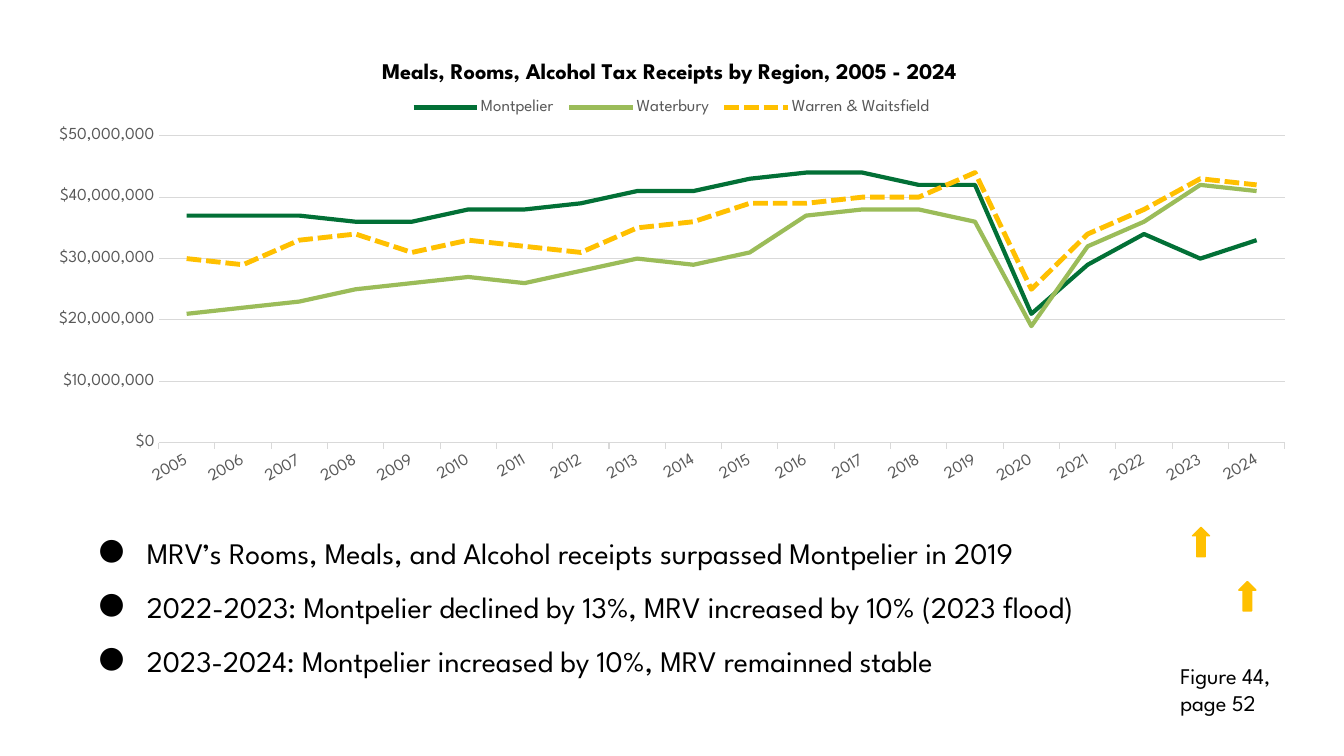
from lxml.etree import SubElement
from pptx import Presentation
from pptx.chart.data import CategoryChartData
from pptx.dml.color import RGBColor
from pptx.enum.chart import XL_CHART_TYPE, XL_LEGEND_POSITION, XL_TICK_MARK
from pptx.enum.dml import MSO_LINE
from pptx.enum.shapes import MSO_SHAPE
from pptx.oxml import parse_xml
from pptx.oxml.ns import nsdecls, qn
from pptx.util import Pt

COLORS = {
    "text": "000000",
    "axis": "595959",
    "grid": "D9D9D9",
    "montpelier": "027036",
    "waterbury": "9BBC59",
    "valley": "FFC000",
}
FONT = "League Spartan"
MILLION = 1_000_000
YEARS = [str(year) for year in range(2005, 2025)]
RECEIPTS = [
    ("Montpelier", "montpelier", 3, None,
     [37, 37, 37, 36, 36, 38, 38, 39, 41, 41, 43, 44, 44, 42, 42, 21, 29, 34, 30, 33]),
    ("Waterbury", "waterbury", 3, None,
     [21, 22, 23, 25, 26, 27, 26, 28, 30, 29, 31, 37, 38, 38, 36, 19, 32, 36, 42, 41]),
    ("Warren & Waitsfield", "valley", 3.5, MSO_LINE.SQUARE_DOT,
     [30, 29, 33, 34, 31, 33, 32, 31, 35, 36, 39, 39, 40, 40, 44, 25, 34, 38, 43, 42]),
]
FINDINGS = [
    "MRV’s Rooms, Meals, and Alcohol receipts surpassed Montpelier in 2019",
    "2022-2023: Montpelier declined by 13%, MRV increased by 10% (2023 flood)",
    "2023-2024: Montpelier increased by 10%, MRV remainned stable",
]


class SlideBuilder:
    def __init__(self, slide):
        self.slide = slide

    def color(self, name):
        return RGBColor.from_string(COLORS[name])

    def style_font(self, font, size, color="text", bold=False):
        font.name = FONT
        font.size = Pt(size)
        font.bold = bold
        font.color.rgb = self.color(color)

    def style_line(self, line, color, width):
        line.color.rgb = self.color(color)
        line.width = Pt(width)

    def text_box(self, left, top, width, height, lines, size, inset=None, bullets=False):
        shape = self.slide.shapes.add_textbox(Pt(left), Pt(top), Pt(width), Pt(height))
        text_frame = shape.text_frame
        text_frame.word_wrap = True
        if inset:
            text_frame.margin_left = text_frame.margin_right = Pt(inset)
            text_frame.margin_top = text_frame.margin_bottom = Pt(inset)
        text_frame.text = "\n".join(lines)
        for paragraph in text_frame.paragraphs:
            if bullets:
                self.add_bullet(paragraph)
                paragraph.line_spacing = 1.5
            for run in paragraph.runs:
                self.style_font(run.font, size)

    def add_bullet(self, paragraph):
        properties = paragraph._p.get_or_add_pPr()
        properties.set("marL", str(Pt(48)))
        properties.set("indent", str(-Pt(34.5)))
        bullet_color = SubElement(properties, qn("a:buClr"))
        SubElement(bullet_color, qn("a:srgbClr"), val=COLORS["text"])
        SubElement(properties, qn("a:buFont"), typeface=FONT)
        SubElement(properties, qn("a:buChar"), char="●")

    def up_arrow(self, left, top):
        shape = self.slide.shapes.add_shape(
            MSO_SHAPE.UP_ARROW, Pt(left), Pt(top), Pt(12.2), Pt(21))
        shape.shadow.inherit = False
        shape.fill.solid()
        shape.fill.fore_color.rgb = self.color("valley")
        self.style_line(shape.line, "valley", 1)

    def place(self, element, index, target=None, **fractions):
        for layout in element.findall(qn("c:layout")):
            element.remove(layout)
        modes = "".join(f'<c:{axis}Mode val="edge"/>' for axis in "xy")
        sizes = "".join(f'<c:{key} val="{value}"/>' for key, value in fractions.items())
        inner = f'<c:layoutTarget val="{target}"/>' if target else ""
        element.insert(index, parse_xml(
            f'<c:layout {nsdecls("c")}><c:manualLayout>{inner}{modes}{sizes}'
            "</c:manualLayout></c:layout>"))

    def line_chart(self, left, top, width, height, title):
        data = CategoryChartData(number_format='"$"#,##0')
        data.categories = YEARS
        for name, _, _, _, values in RECEIPTS:
            data.add_series(name, [value * MILLION for value in values])
        chart = self.slide.shapes.add_chart(
            XL_CHART_TYPE.LINE, Pt(left), Pt(top), Pt(width), Pt(height), data).chart
        self.style_font(chart.font, 12, "axis")
        chart.has_title = True
        chart.chart_title.text_frame.text = title
        self.style_font(chart.chart_title.text_frame.paragraphs[0].runs[0].font, 16, bold=True)
        chart.has_legend = True
        chart.legend.position = XL_LEGEND_POSITION.TOP
        chart.legend.include_in_layout = False
        self.style_font(chart.legend.font, 12, "axis")
        plot = chart.plots[0]
        plot.vary_by_categories = False
        for series, (_, color, line_width, dash, _) in zip(plot.series, RECEIPTS):
            series.smooth = False
            self.style_line(series.format.line, color, line_width)
            if dash:
                series.format.line.dash_style = dash
        self.style_axes(chart.category_axis, chart.value_axis)
        self.place(chart.chart_title._element, 1, x=0.27, y=0.04)
        self.place(chart.legend._element, 1, x=0.29, y=0.12, w=0.42, h=0.06)
        plot_area = chart._chartSpace.chart.plotArea
        self.place(plot_area, 0, "inner", x=0.098, y=0.212, w=0.882, h=0.674)

    def style_axes(self, years, dollars):
        for axis in (years, dollars):
            self.style_font(axis.tick_labels.font, 12, "axis")
        years.major_tick_mark = XL_TICK_MARK.OUTSIDE
        self.style_line(years.format.line, "grid", 0.75)
        years._element.find(qn("c:txPr")).find(qn("a:bodyPr")).set("rot", str(-30 * 60000))
        dollars.minimum_scale = 0
        dollars.maximum_scale = 50 * MILLION
        dollars.major_unit = 10 * MILLION
        dollars.major_tick_mark = XL_TICK_MARK.NONE
        dollars.format.line.fill.background()
        dollars.tick_labels.number_format = '"$"#,##0'
        dollars.tick_labels.number_format_is_linked = False
        self.style_line(dollars.major_gridlines.format.line, "grid", 0.75)


def main():
    presentation = Presentation()
    presentation.slide_width = Pt(960)
    presentation.slide_height = Pt(540)
    builder = SlideBuilder(presentation.slides.add_slide(presentation.slide_layouts[6]))
    builder.text_box(47.5, 360, 865.5, 152, FINDINGS, 21.3, inset=9.4, bullets=True)
    for left, top in ((851.8, 376.6), (884.9, 415.4)):
        builder.up_arrow(left, top)
    builder.line_chart(23.8, 28, 912.2, 325.5,
                       "Meals, Rooms, Alcohol Tax Receipts by Region, 2005 - 2024")
    builder.text_box(836, 469.4, 100, 46, ["Figure 44, page 52"], 16)
    presentation.save("out.pptx")


if __name__ == "__main__":
    main()
